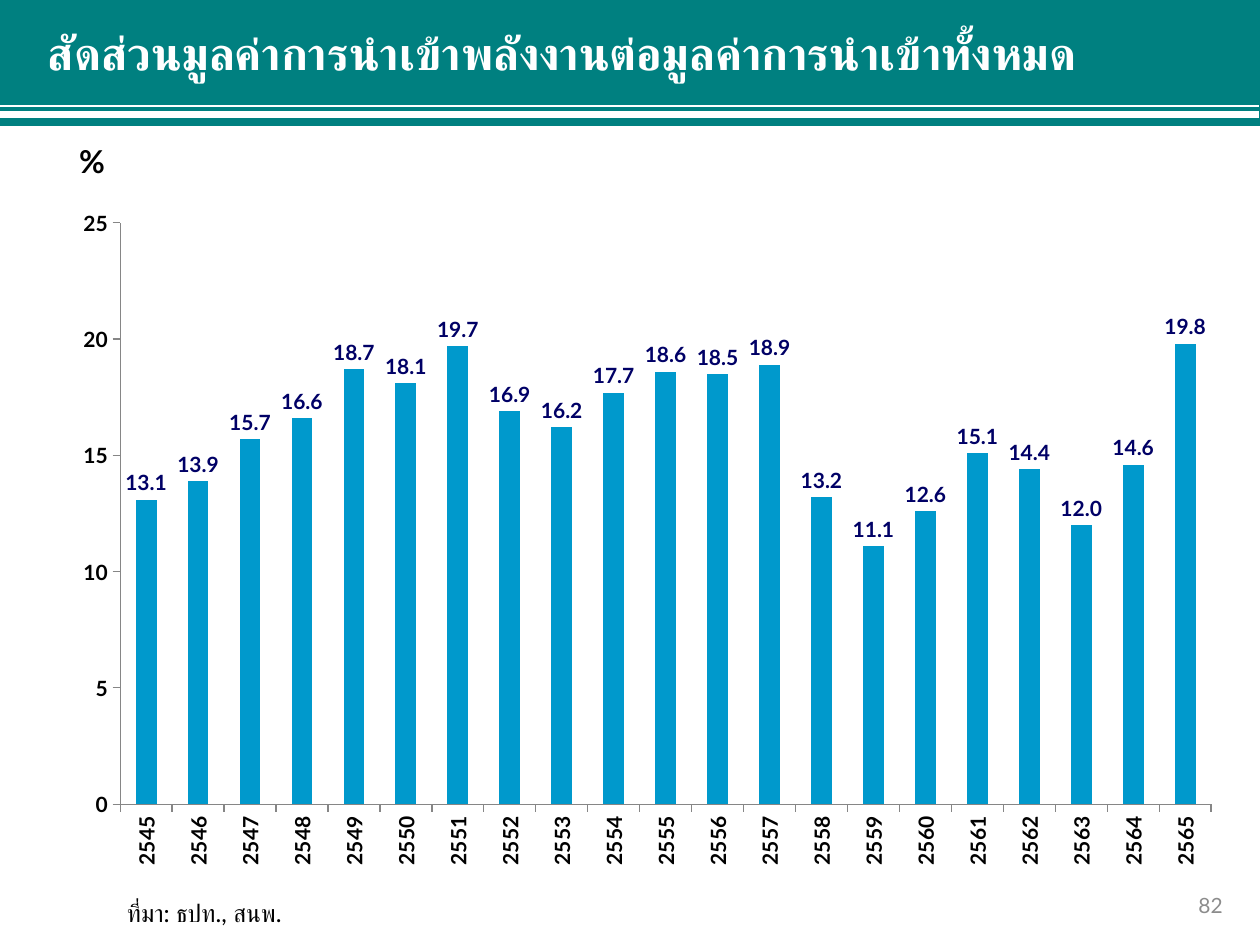
import pptx
import pptx.chart.data
import pptx.dml.color
import pptx.enum.chart
import pptx.enum.shapes
import pptx.enum.text
import pptx.oxml
import pptx.oxml.ns
import pptx.util

Cm, Pt = pptx.util.Cm, pptx.util.Pt
XL = pptx.enum.chart
ALIGN = pptx.enum.text.PP_ALIGN
ANCHOR = pptx.enum.text.MSO_ANCHOR

COLORS = {"teal": "008080", "white": "FFFFFF", "black": "000000",
          "bar": "0099CC", "label": "000066", "axis": "868686", "number": "8C8C8C"}
IMPORT_SHARE = [13.1, 13.9, 15.7, 16.6, 18.7, 18.1, 19.7, 16.9, 16.2, 17.7, 18.6,
                18.5, 18.9, 13.2, 11.1, 12.6, 15.1, 14.4, 12.0, 14.6, 19.8]
FIRST_YEAR = 2545


def rgb(name):
    return pptx.dml.color.RGBColor.from_string(COLORS[name])


class SlideBuilder:
    font_name = "Lato"

    def __init__(self, prs, layout):
        self.s = prs.slides.add_slide(prs.slide_layouts[layout])

    def style_font(self, font, size, color="black", bold=False):
        values = {"name": self.font_name, "size": Pt(size), "bold": bold}
        for name, value in values.items():
            setattr(font, name, value)
        font.color.rgb = rgb(color)

    def band(self, left, top, width, height):
        sp = self.s.shapes.add_shape(pptx.enum.shapes.MSO_SHAPE.RECTANGLE,
                                     Cm(left), Cm(top), Cm(width), Cm(height))
        sp.shadow.inherit = False
        sp.fill.solid()
        sp.fill.fore_color.rgb = rgb("teal")
        sp.line.fill.background()

    def rule(self, left, right, y, weight):
        line = self.s.shapes.add_connector(pptx.enum.shapes.MSO_CONNECTOR.STRAIGHT,
                                           Cm(left), Cm(y), Cm(right), Cm(y))
        line.line.color.rgb = rgb("white")
        line.line.width = Pt(weight)
        line._element.spPr.append(pptx.oxml.parse_xml(
            f'<a:effectLst {pptx.oxml.ns.nsdecls("a")}/>'))

    def fill_text(self, sp, text, size, color="black", bold=False,
                  align=ALIGN.LEFT, anchor=ANCHOR.TOP, wrap=True):
        tf = sp.text_frame
        values = {"word_wrap": wrap, "vertical_anchor": anchor,
                  "auto_size": pptx.enum.text.MSO_AUTO_SIZE.NONE}
        for name, value in values.items():
            setattr(tf, name, value)
        p = tf.paragraphs[0]
        p.alignment = align
        r = p.add_run()
        r.text = text
        self.style_font(r.font, size, color, bold)

    def title(self, text, left, top, width, height):
        sp = self.s.shapes.title
        sp.left, sp.top, sp.width, sp.height = Cm(left), Cm(top), Cm(width), Cm(height)
        self.s.shapes._spTree.append(sp._element)  # in front of the band
        self.fill_text(sp, text, 26, "white", True)

    def text(self, text, left, top, width, height, size, **style):
        sp = self.s.shapes.add_textbox(Cm(left), Cm(top), Cm(width), Cm(height))
        self.fill_text(sp, text, size, **style)

    def style_axis(self, axis):
        axis.has_major_gridlines = False
        axis.major_tick_mark = XL.XL_TICK_MARK.OUTSIDE
        axis.minor_tick_mark = XL.XL_TICK_MARK.NONE
        axis.format.line.color.rgb = rgb("axis")
        axis.format.line.width = Pt(0.75)
        self.style_font(axis.tick_labels.font, 12, bold=True)

    def column_chart(self, categories, values, left, top, width, height):
        data = pptx.chart.data.CategoryChartData()
        data.categories = categories
        data.add_series("Series 1", values)
        chart = self.s.shapes.add_chart(XL.XL_CHART_TYPE.COLUMN_CLUSTERED, Cm(left), Cm(top),
                                        Cm(width), Cm(height), data).chart
        chart.has_legend = chart.has_title = False
        chart.font.name, chart.font.size = "Calibri", Pt(18)
        chart.font.color.rgb = rgb("black")

        for axis in (chart.category_axis, chart.value_axis):
            self.style_axis(axis)
        chart.category_axis._element.txPr.bodyPr.set("rot", "-5400000")
        axis = chart.value_axis
        axis.minimum_scale, axis.maximum_scale, axis.major_unit = 0, 25, 5
        axis.tick_labels.number_format = "#,##0"
        axis.tick_labels.number_format_is_linked = False

        plot = chart.plots[0]
        plot.gap_width = 150
        plot.vary_by_categories = False
        fill = plot.series[0].format.fill
        fill.solid()
        fill.fore_color.rgb = rgb("bar")
        plot.has_data_labels = True
        labels = plot.data_labels
        formats = {"show_value": True, "number_format": "#,##0.0",
                   "number_format_is_linked": False,
                   "position": XL.XL_LABEL_POSITION.OUTSIDE_END}
        for name, value in formats.items():
            setattr(labels, name, value)
        self.style_font(labels.font, 12, "label", True)
        self.place_plot(chart, x=0.05, y=0.04, w=0.93, h=0.85)

    def place_plot(self, chart, **fractions):
        """Fix the inner plot area as fractions of the chart frame."""
        area = chart._chartSpace.chart.plotArea
        for old in area.findall(pptx.oxml.ns.qn("c:layout")):
            area.remove(old)
        places = "".join(f'<c:{k} val="{v}"/>' for k, v in fractions.items())
        area.insert(0, pptx.oxml.parse_xml(
            f'<c:layout {pptx.oxml.ns.nsdecls("c")}><c:manualLayout>'
            '<c:layoutTarget val="inner"/><c:xMode val="edge"/><c:yMode val="edge"/>'
            f'{places}</c:manualLayout></c:layout>'))


def main():
    prs = pptx.Presentation()
    prs.slide_width, prs.slide_height = Cm(25.4), Cm(19.05)
    slide = SlideBuilder(prs, layout=5)

    slide.band(-0.08, -0.1, 25.48, 2.64)
    for y, weight in ((2.31, 3.75), (2.13, 1.25)):
        slide.rule(-0.08, 25.37, y, weight)
    years = [str(FIRST_YEAR + i) for i in range(len(IMPORT_SHARE))]
    slide.column_chart(years, IMPORT_SHARE, 1.24, 3.94, 23.65, 13.79)
    slide.title("สัดส่วนมูลค่าการนำเข้าพลังงานต่อมูลค่าการนำเข้าทั้งหมด", 0.71, 0.38, 24.18, 1.37)
    slide.text("%", 0.61, 2.74, 2.49, 1.02, 18, bold=True, align=ALIGN.CENTER)
    slide.text("ที่มา: ธปท., สนพ.", 2.31, 17.98, 4.24, 0.86, 14, wrap=False)
    slide.text("82", 23.55, 17.78, 1.35, 0.94, 12, color="number",
               align=ALIGN.RIGHT, anchor=ANCHOR.MIDDLE)
    prs.save("out.pptx")


if __name__ == "__main__":
    main()
